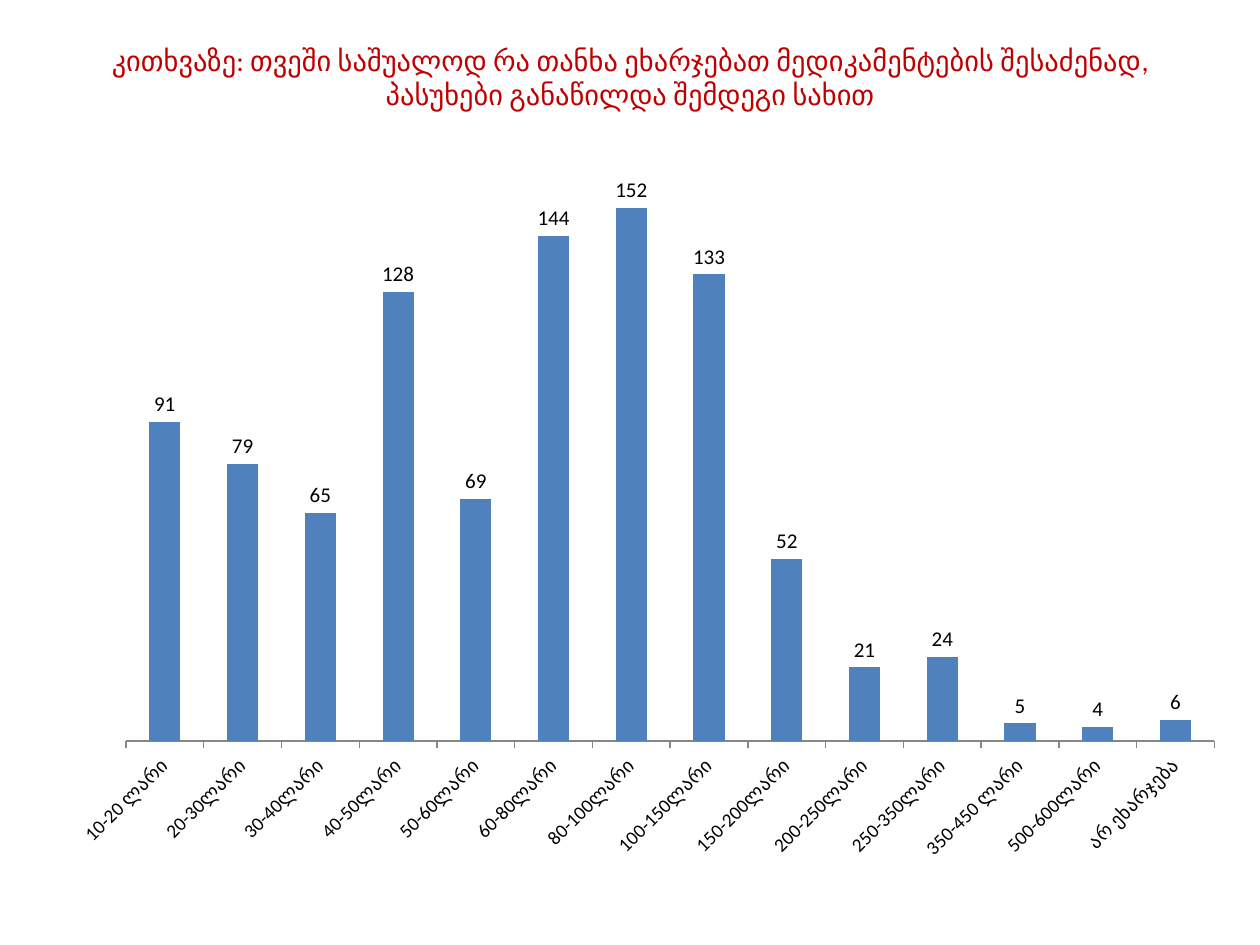
from dataclasses import dataclass

from lxml import etree
from pptx import Presentation
from pptx.chart.data import CategoryChartData
from pptx.dml.color import RGBColor
from pptx.enum import chart as ch, text
from pptx.oxml import ns
from pptx.util import Pt


@dataclass(frozen=True)
class Theme:
    font: str = "Calibri"
    title: RGBColor = RGBColor(0xC0, 0x00, 0x00)
    ink: RGBColor = RGBColor(0x00, 0x00, 0x00)
    bar: RGBColor = RGBColor(0x4F, 0x81, 0xBD)
    axis: RGBColor = RGBColor(0x86, 0x86, 0x86)
    title_size: float = 16.2
    chart_size: float = 10
    axis_size: float = 11
    label_size: float = 12


THEME = Theme()

TITLE = ("კითხვაზე: თვეში საშუალოდ რა თანხა ეხარჯებათ მედიკამენტების შესაძენად, "
         "პასუხები განაწილდა შემდეგი სახით")

SPENDING = {
    "10-20 ლარი": 91, "20-30ლარი": 79, "30-40ლარი": 65, "40-50ლარი": 128,
    "50-60ლარი": 69, "60-80ლარი": 144, "80-100ლარი": 152, "100-150ლარი": 133,
    "150-200ლარი": 52, "200-250ლარი": 21, "250-350ლარი": 24,
    "350-450 ლარი": 5, "500-600ლარი": 4, "არ ეხარჯება": 6,
}


def set_attrs(obj, values):
    for name, value in values.items():
        setattr(obj, name, value)


def set_font(font, size, color):
    set_attrs(font, {"name": THEME.font, "size": Pt(size), "bold": False})
    font.color.rgb = color


def set_plot_area(chart, x, y, w, h):
    """Fix the inner plot area, in fractions of the chart."""
    plot_area = chart.plots[0]._element.getparent()
    for old in plot_area.findall(ns.qn("c:layout")):
        plot_area.remove(old)
    layout = etree.Element(ns.qn("c:layout"))
    manual = etree.SubElement(layout, ns.qn("c:manualLayout"))
    values = {"layoutTarget": "inner", "xMode": "edge", "yMode": "edge",
              "x": x, "y": y, "w": w, "h": h}
    for name, value in values.items():
        etree.SubElement(manual, ns.qn(f"c:{name}")).set("val", str(value))
    plot_area.insert(0, layout)


def add_title(s):
    sp = s.shapes.title
    set_attrs(sp, {"left": Pt(36), "top": Pt(21.6),
                   "width": Pt(648), "height": Pt(90)})
    tf = sp.text_frame
    # The deep bottom margin lifts the centred text clear of the chart
    set_attrs(tf, {"word_wrap": True, "auto_size": text.MSO_AUTO_SIZE.NONE,
                   "vertical_anchor": text.MSO_ANCHOR.MIDDLE,
                   "margin_top": Pt(0), "margin_bottom": Pt(45)})
    p = tf.paragraphs[0]
    p.alignment = text.PP_ALIGN.CENTER
    r = p.add_run()
    r.text = TITLE
    set_font(r.font, THEME.title_size, THEME.title)


def add_spending_chart(s):
    data = CategoryChartData()
    data.categories = list(SPENDING)
    data.add_series("Series 1", list(SPENDING.values()))
    chart = s.shapes.add_chart(ch.XL_CHART_TYPE.COLUMN_CLUSTERED, Pt(36), Pt(90),
                               Pt(666), Pt(408.24), data).chart
    set_attrs(chart, {"has_legend": False, "has_title": False})
    set_font(chart.font, THEME.chart_size, THEME.ink)
    set_plot_area(chart, 0.054, 0.031, 0.934, 0.786)

    # Axes
    set_attrs(chart.value_axis, {"visible": False, "has_major_gridlines": False,
                                 "minimum_scale": 0, "maximum_scale": 160})
    axis = chart.category_axis
    set_attrs(axis, {"has_major_gridlines": False,
                     "major_tick_mark": ch.XL_TICK_MARK.OUTSIDE})
    set_font(axis.tick_labels.font, THEME.axis_size, THEME.ink)
    axis.format.line.color.rgb = THEME.axis
    axis.format.line.width = Pt(0.75)
    axis._element.txPr.find(ns.qn("a:bodyPr")).set("rot", "-2700000")

    # Bars and their values
    plot = chart.plots[0]
    set_attrs(plot, {"gap_width": 150, "vary_by_categories": False,
                     "has_data_labels": True})
    fill = plot.series[0].format.fill
    fill.solid()
    fill.fore_color.rgb = THEME.bar
    labels = plot.data_labels
    set_attrs(labels, {"show_value": True,
                       "position": ch.XL_LABEL_POSITION.OUTSIDE_END})
    set_font(labels.font, THEME.label_size, THEME.ink)


def main():
    prs = Presentation()
    set_attrs(prs, {"slide_width": Pt(720), "slide_height": Pt(540)})
    s = prs.slides.add_slide(prs.slide_layouts[5])
    add_title(s)
    add_spending_chart(s)
    prs.save("out.pptx")


if __name__ == "__main__":
    main()
